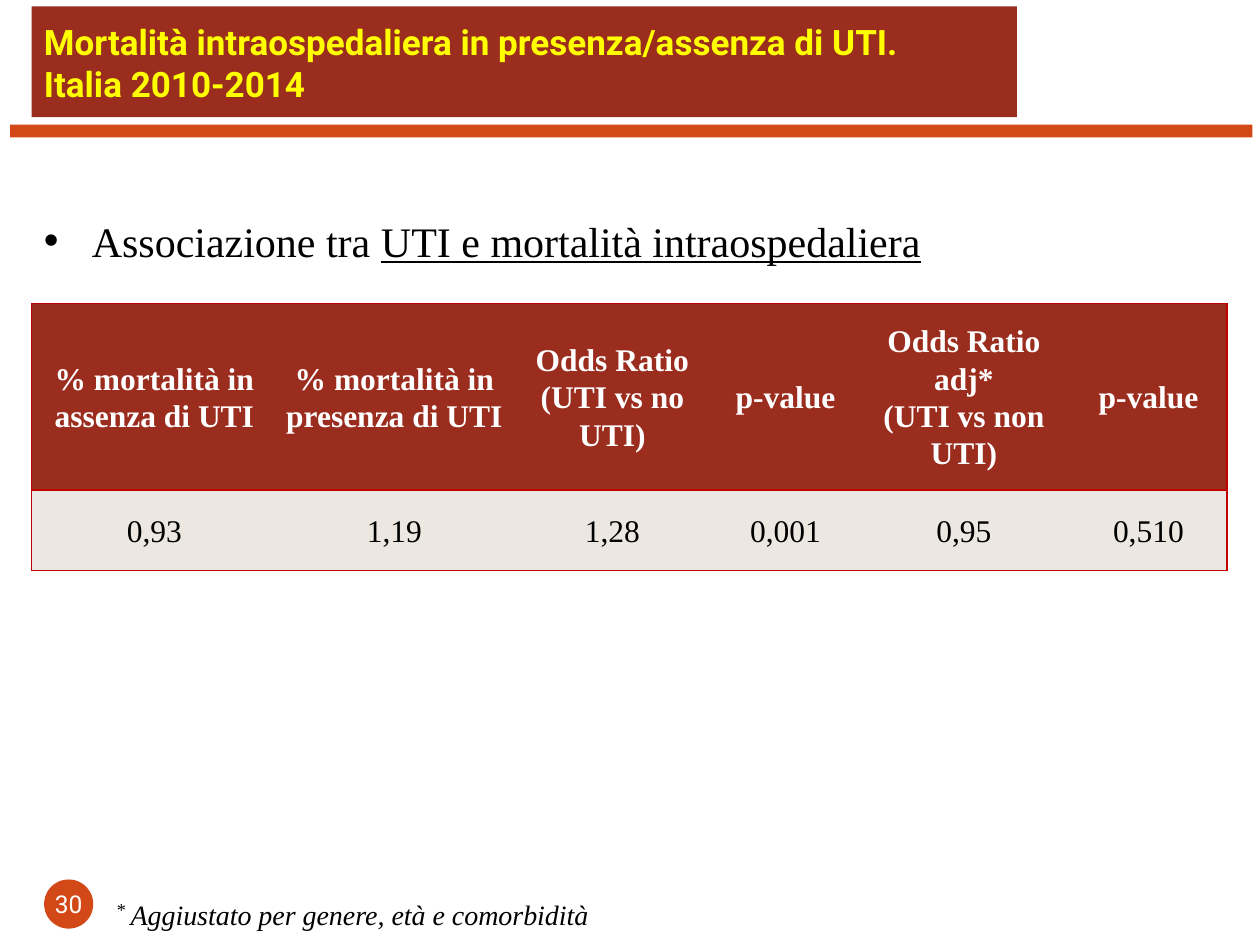
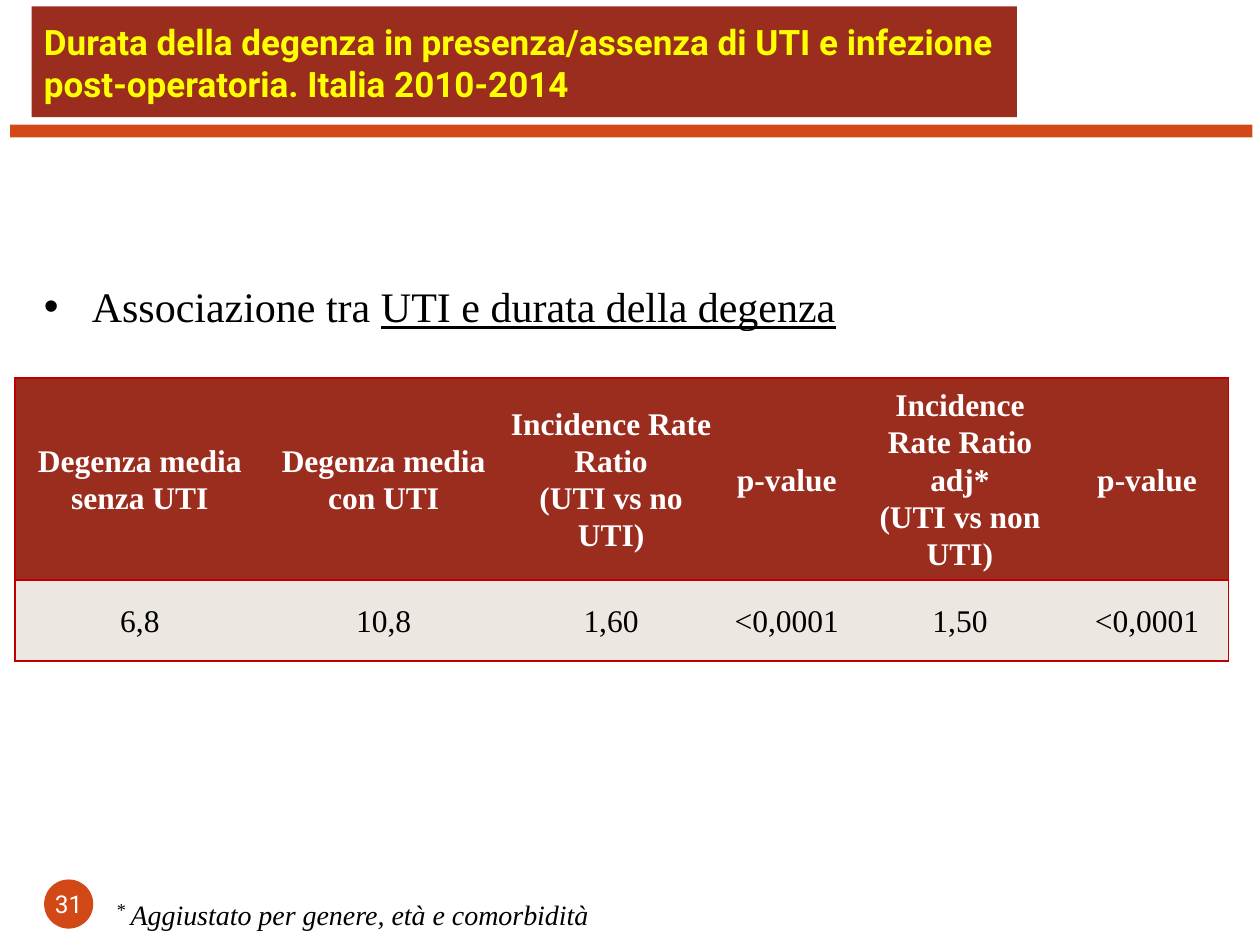
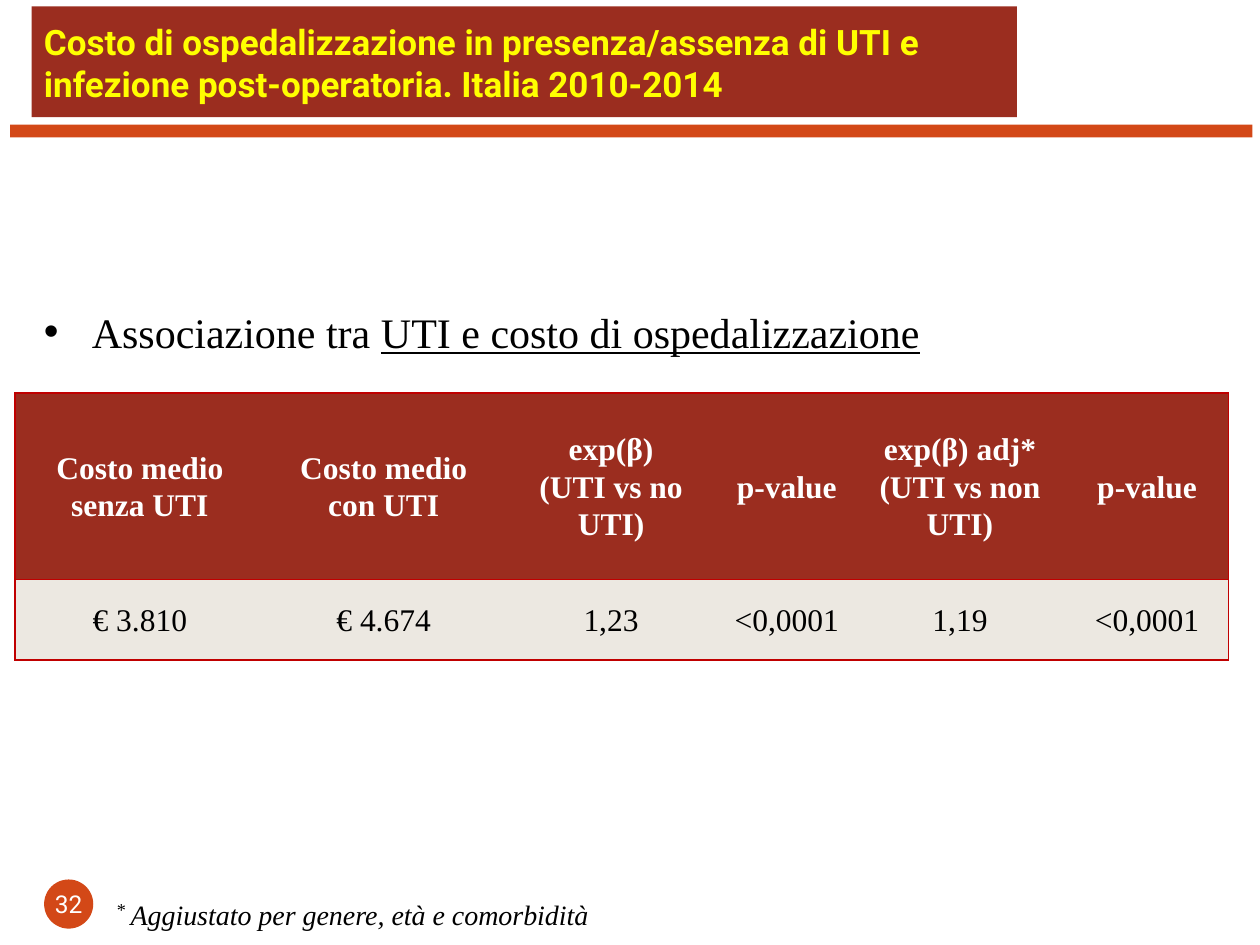
from lxml.etree import SubElement
from pptx import Presentation
from pptx.dml.color import RGBColor
from pptx.enum.shapes import MSO_SHAPE
from pptx.enum.text import MSO_ANCHOR, MSO_AUTO_SIZE, PP_ALIGN
from pptx.oxml.ns import qn
from pptx.util import Inches, Pt

# Shared style
BRICK = "9B2D1F"
ORANGE = "D34817"
YELLOW = "FFFF00"
WHITE = "FFFFFF"
BLACK = "000000"
SAND = "ECE8E1"
BORDER = "C00000"
SANS = "Roboto"
SERIF = "Times New Roman"
ROW_HEIGHTS = [1.48, 0.64]
FIRST_PAGE = 30
color = RGBColor.from_string

# Content of each slide; header lines are split into paragraphs at "\n"
slides = [
    {
        "title": "Mortalità intraospedaliera in presenza/assenza di UTI.\vItalia 2010-2014",
        "topic": "UTI e mortalità intraospedaliera",
        "topic_top": 1.66,
        "table_at": (0.25, 2.41),
        "columns": [1.95, 1.86, 1.6, 1.15, 1.68, 1.25],
        "rows": [
            ["% mortalità in assenza di UTI", "% mortalità in presenza di UTI",
             "Odds Ratio\n(UTI vs no UTI)", "p-value",
             "Odds Ratio\nadj*\n(UTI vs non UTI)", "p-value"],
            ["0,93", "1,19", "1,28", "0,001", "0,95", "0,510"],
        ],
    },
    {
        "title": "Durata della degenza in presenza/assenza di UTI e infezione "
                 "post-operatoria. Italia 2010-2014",
        "topic": "UTI e durata della degenza",
        "topic_top": 2.18,
        "table_at": (0.12, 3),
        "columns": [1.98, 1.89, 1.72, 1.07, 1.68, 1.29],
        "rows": [
            ["Degenza media senza UTI", "Degenza media con UTI",
             "Incidence Rate Ratio\n(UTI vs no UTI)", "p-value",
             "Incidence Rate Ratio\nadj*\n(UTI vs non UTI)", "p-value"],
            ["6,8", "10,8", "1,60", "<0,0001", "1,50", "<0,0001"],
        ],
    },
    {
        "title": "Costo di ospedalizzazione in presenza/assenza di UTI e "
                 "infezione post-operatoria. Italia 2010-2014",
        "topic": "UTI e costo di ospedalizzazione",
        "topic_top": 2.38,
        "table_at": (0.12, 3.12),
        "columns": [1.98, 1.89, 1.72, 1.07, 1.68, 1.29],
        "rows": [
            ["Costo medio senza UTI", "Costo medio\ncon UTI",
             "exp(β)\n(UTI vs no UTI)", "p-value",
             "exp(β) adj*\n(UTI vs non UTI)", "p-value"],
            ["€ 3.810", "€ 4.674", "1,23", "<0,0001", "1,19", "<0,0001"],
        ],
    },
]


def write(paragraph, text, size=18, font=SERIF, fill=BLACK, bold=False,
          italic=False, underline=False, baseline=0, align=PP_ALIGN.LEFT):
    """Append formatted text to a paragraph, breaking lines at \\v."""
    paragraph.alignment = align
    for index, line in enumerate(text.split("\v")):
        if index:
            paragraph.add_line_break()
        run = paragraph.add_run()
        run.text = line
        run.font.size = Pt(size)
        run.font.name = font
        run.font.color.rgb = color(fill)
        run.font.bold = bold
        run.font.italic = italic
        run.font.underline = underline
        if baseline:
            run.font._element.set("baseline", str(baseline * 1000))


def add_block(slide, preset, left, top, width, height, fill):
    """Add a filled shape without outline or shadow."""
    shape = slide.shapes.add_shape(
        preset, Inches(left), Inches(top), Inches(width), Inches(height))
    shape.shadow.inherit = False
    shape.fill.solid()
    shape.fill.fore_color.rgb = color(fill)
    shape.line.fill.background()
    return shape


presentation = Presentation()
presentation.slide_width = Inches(10)
presentation.slide_height = Inches(7.5)

for page, content in enumerate(slides, FIRST_PAGE):
    slide = presentation.slides.add_slide(presentation.slide_layouts[6])

    # Band and title
    add_block(slide, MSO_SHAPE.RECTANGLE, 0.08, 0.99, 9.86, 0.1, ORANGE)
    title = add_block(slide, MSO_SHAPE.RECTANGLE, 0.25, 0.05, 7.82, 0.88, BRICK)
    title_frame = title.text_frame
    title_frame.word_wrap = True
    title_frame.vertical_anchor = MSO_ANCHOR.BOTTOM
    title_frame.margin_bottom = Inches(0.1)
    write(title_frame.paragraphs[0], content["title"], size=20, font=SANS,
          fill=YELLOW, bold=True)

    # Page number
    badge = add_block(slide, MSO_SHAPE.OVAL, 0.35, 6.98, 0.39, 0.39, ORANGE)
    badge_frame = badge.text_frame
    badge_frame.word_wrap = False
    badge_frame.vertical_anchor = MSO_ANCHOR.MIDDLE
    badge_frame.margin_left = badge_frame.margin_right = 0
    badge_frame.margin_top = badge_frame.margin_bottom = 0
    write(badge_frame.paragraphs[0], str(page), size=14, font=SANS,
          fill=WHITE, align=PP_ALIGN.CENTER)

    # Results table
    left, top = content["table_at"]
    columns = content["columns"]
    table = slide.shapes.add_table(
        len(ROW_HEIGHTS), len(columns), Inches(left), Inches(top),
        Inches(sum(columns)), Inches(sum(ROW_HEIGHTS))).table
    for column, width in zip(table.columns, columns):
        column.width = Inches(width)
    for row_index, texts in enumerate(content["rows"]):
        table.rows[row_index].height = Inches(ROW_HEIGHTS[row_index])
        is_header = row_index == 0
        for column_index, text in enumerate(texts):
            cell = table.cell(row_index, column_index)
            cell.vertical_anchor = MSO_ANCHOR.MIDDLE
            cell.margin_left = cell.margin_right = Inches(0.05)
            cell.margin_top = cell.margin_bottom = 0

            # Red outline and row rules, no inner vertical rules
            visible = {
                "a:lnL": column_index == 0,
                "a:lnR": column_index == len(columns) - 1,
                "a:lnT": True,
                "a:lnB": True,
            }
            properties = cell._tc.get_or_add_tcPr()
            for side, shown in visible.items():
                line = SubElement(properties, qn(side), w=str(Pt(1)))
                if shown:
                    solid = SubElement(line, qn("a:solidFill"))
                    SubElement(solid, qn("a:srgbClr"), val=BORDER)
                else:
                    SubElement(line, qn("a:noFill"))
            cell.fill.solid()
            cell.fill.fore_color.rgb = color(BRICK if is_header else SAND)

            for index, line_text in enumerate(text.split("\n")):
                frame = cell.text_frame
                paragraph = frame.add_paragraph() if index else frame.paragraphs[0]
                paragraph.line_spacing = 1.07
                write(paragraph, line_text, bold=is_header,
                      fill=WHITE if is_header else BLACK, align=PP_ALIGN.CENTER)

    # Footnote
    footnote = slide.shapes.add_textbox(
        Inches(0.83), Inches(7.05), Inches(8.03), Inches(0.4))
    footnote.text_frame.word_wrap = True
    footnote.text_frame.auto_size = MSO_AUTO_SIZE.SHAPE_TO_FIT_TEXT
    paragraph = footnote.text_frame.paragraphs[0]
    write(paragraph, "* ", baseline=30)
    write(paragraph, "Aggiustato per genere, età e comorbidità", size=16, italic=True)

    # Bulleted topic
    topic = slide.shapes.add_textbox(
        Inches(0.25), Inches(content["topic_top"]), Inches(9.08), Inches(0.5))
    topic.text_frame.word_wrap = True
    topic.text_frame.auto_size = MSO_AUTO_SIZE.SHAPE_TO_FIT_TEXT
    paragraph = topic.text_frame.paragraphs[0]
    properties = paragraph._p.get_or_add_pPr()
    properties.set("marL", str(Inches(0.38)))
    properties.set("indent", str(Inches(-0.38)))
    SubElement(properties, qn("a:buFont"), typeface="Arial")
    SubElement(properties, qn("a:buChar"), char="•")
    write(paragraph, "Associazione tra ", size=24)
    write(paragraph, content["topic"], size=24, underline=True)

presentation.save("out.pptx")
